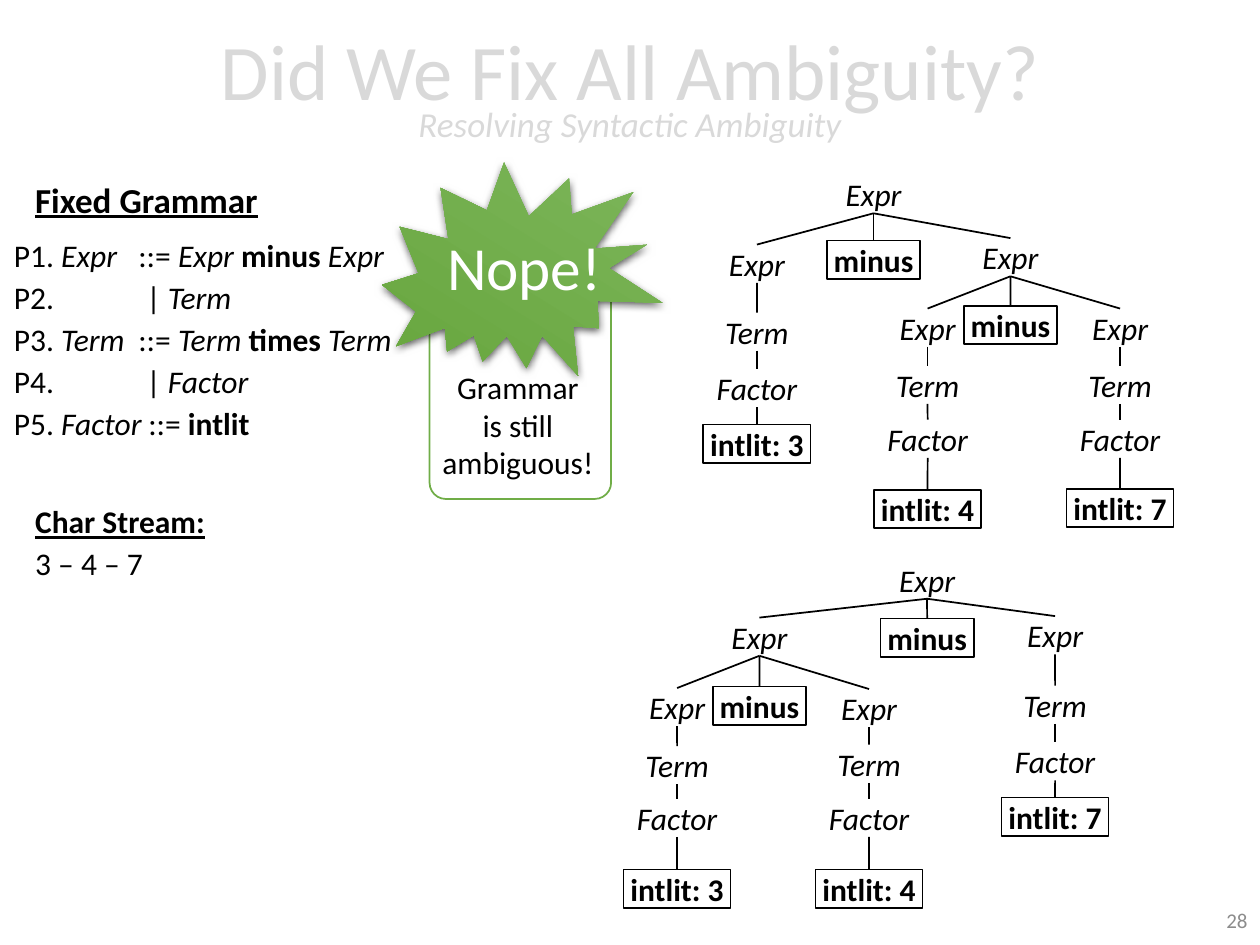
from dataclasses import dataclass

from lxml.etree import SubElement
from pptx import Presentation
from pptx.dml.color import RGBColor
from pptx.enum.shapes import MSO_CONNECTOR, MSO_SHAPE
from pptx.enum.text import MSO_ANCHOR, MSO_AUTO_SIZE, PP_ALIGN
from pptx.oxml.ns import qn
from pptx.util import Cm, Pt


@dataclass(frozen=True)
class Theme:
    font: str = "Calibri"
    ink: str = "000000"
    paper: str = "FFFFFF"
    title: str = "D9D9D9"
    number: str = "8C8C8C"
    green: str = "70AD47"
    burst_top: str = "81B861"
    burst_bottom: str = "62A336"
    title_size: int = 45
    burst_size: int = 35
    heading_size: int = 20
    body_size: int = 18
    number_size: int = 12
    line: int = 1


THEME = Theme()

TITLE = "Did We Fix All Ambiguity?"
SUBTITLE = "Resolving Syntactic Ambiguity"
SLIDE_NUMBER = "28"
GRAMMAR_HEADING = "Fixed Grammar"
STREAM_HEADING, STREAM = "Char Stream:", "3 – 4 – 7"
BURST_WORD = "Nope!"
VERDICT = ("Grammar\vis still", "ambiguous!")
GRAMMAR = [
    ("P1. ", "Expr", "::= ", [("Expr", "i"), (" minus ", "b"), ("Expr", "i")], 2.51),
    ("P2.", "", "| ", [("Term", "i")], 2.67),
    ("P3. ", "Term", "::= ", [("Term ", "i"), ("times ", "b"), ("Term", "i")], 2.51),
    ("P4.", "", "| ", [("Factor", "i")], 2.67),
    ("P5. ", "Factor", "::= ", [("intlit", "b")], 2.71),
]


def operand(number, x, tops):
    """Return the Expr-Term-Factor-intlit branch centred on x."""
    branch = []
    for label, top in reversed(list(zip(("Expr", "Term", "Factor", f"intlit: {number}"), tops))):
        branch = [(label, x, top, branch)]
    return branch[0]


def subtraction(x, top, left, minus_top, right):
    """Return an Expr node that splits around a minus."""
    return ("Expr", x, top, [left, ("minus", x, minus_top, []), right])


PARSE_TREES = [
    subtraction(
        17.61, 3.53,
        operand(3, 15.26, (4.93, 6.3, 7.44, 8.56)), 4.85,
        subtraction(
            20.37, 4.8,
            operand(4, 18.7, (6.22, 7.37, 8.46, 9.88)), 6.17,
            operand(7, 22.58, (6.22, 7.37, 8.46, 9.86)))),
    subtraction(
        18.69, 11.3,
        subtraction(
            15.31, 12.45,
            operand(3, 13.65, (13.87, 15.04, 16.1, 17.53)), 13.84,
            operand(4, 17.52, (13.89, 15.01, 16.1, 17.53))), 12.47,
        operand(7, 21.27, (12.42, 13.82, 14.96, 16.08))),
]
NODE_WIDTHS = {"Expr": 1.4, "Term": 1.6, "Factor": 2, "minus": 1.88, "intlit": 2.16}
NODE_HEIGHT, NODE_INSET = 0.77, 0.12


def rgb(value):
    """Return a colour from its hex value."""
    return RGBColor.from_string(value)


def style(font, size, color=THEME.ink, bold=None, italic=None, underline=None):
    """Set every font property of a paragraph or run."""
    font.name, font.size, font.color.rgb = THEME.font, Pt(size), rgb(color)
    font.bold, font.italic, font.underline = bold, italic, underline


def add_text(shapes, box, lines, align=PP_ALIGN.LEFT, anchor=MSO_ANCHOR.TOP, wrap=True):
    """Add a text box from (text, style, spacing, space before) lines."""
    frame = shapes.add_textbox(*map(Cm, box)).text_frame
    frame.word_wrap, frame.vertical_anchor = wrap, anchor
    for index, (text, look, spacing, before) in enumerate(lines):
        paragraph = frame.add_paragraph() if index else frame.paragraphs[0]
        paragraph.text, paragraph.alignment = text, align
        paragraph.line_spacing, paragraph.space_before = spacing, Pt(before)
        style(paragraph.font, **look)
    return frame


def add_shape(shapes, kind, box):
    """Add a white preset shape without line or shadow."""
    shape = shapes.add_shape(kind, *map(Cm, box))
    shape.shadow.inherit = False
    shape.fill.solid()
    shape.fill.fore_color.rgb = rgb(THEME.paper)
    shape.line.fill.background()
    return shape


def outline(shape, color):
    """Give a shape or connector a thin line."""
    shape.line.color.rgb, shape.line.width = rgb(color), Pt(THEME.line)


def add_node(shapes, node):
    """Draw a parse tree node with its branches and return its shape."""
    label, x, top, children = node
    width = NODE_WIDTHS[label.split(":")[0]]
    terminal = not children
    shape = add_shape(shapes, MSO_SHAPE.RECTANGLE, (x - width / 2, top, width, NODE_HEIGHT))
    if terminal:
        outline(shape, THEME.ink)
    frame = shape.text_frame
    frame.margin_left = frame.margin_right = Cm(NODE_INSET)
    frame.margin_top = frame.margin_bottom = 0
    frame.word_wrap, frame.auto_size = False, MSO_AUTO_SIZE.SHAPE_TO_FIT_TEXT
    frame.text = label
    frame.paragraphs[0].alignment = PP_ALIGN.CENTER
    style(frame.paragraphs[0].font, THEME.body_size, bold=terminal, italic=not terminal)
    for child in children:
        child_shape = add_node(shapes, child)
        branch = shapes.add_connector(MSO_CONNECTOR.STRAIGHT, 0, 0, 0, 0)
        branch.begin_connect(shape, 2)
        branch.end_connect(child_shape, 0)
        outline(branch, THEME.ink)
        SubElement(branch._element.spPr, qn("a:effectLst"))
    return shape


def add_burst(shapes):
    """Draw the green burst with its word."""
    burst_group = shapes.add_group_shape().shapes
    burst = add_shape(burst_group, MSO_SHAPE.EXPLOSION2, (7.92, 2.97, 5.31, 5.16))
    burst.rotation = 31.8
    burst.fill.gradient()
    burst.fill.gradient_angle = 270
    for stop, color, position in zip(
            burst.fill.gradient_stops, (THEME.burst_top, THEME.burst_bottom), (0, 1)):
        stop.color.rgb, stop.position = rgb(color), position
    effects = burst._element.spPr.find(qn("a:effectLst"))
    shadow = SubElement(effects, qn("a:outerShdw"), blurRad=str(Pt(4.5)), dist=str(Pt(1.5)),
                        dir="5400000", algn="ctr", rotWithShape="0")
    shade = SubElement(shadow, qn("a:srgbClr"), val=THEME.ink)
    SubElement(shade, qn("a:alpha"), val="63000")
    look = dict(size=THEME.burst_size, color=THEME.paper)
    add_text(burst_group, (8.74, 4.5, 3.66, 1.75), [(BURST_WORD, look, None, 0)],
             PP_ALIGN.CENTER, wrap=False)


def add_grammar(shapes):
    """Write the productions with their operators on tab stops."""
    plain = dict(size=THEME.body_size)
    frame = add_text(shapes, (0.03, 4.55, 9.17, 4.5), [("", plain, Pt(24), 0)] * len(GRAMMAR))
    for paragraph, (rule, head, operator, production, tab) in zip(frame.paragraphs, GRAMMAR):
        stops = SubElement(paragraph._p.get_or_add_pPr(), qn("a:tabLst"))
        SubElement(stops, qn("a:tab"), pos=str(Cm(tab)), algn="l")
        paragraph._p.pPr.insert_element_before(stops, "a:defRPr", "a:extLst")
        pieces = [(rule, ""), (head, "i"), ("\t" + operator, ""), *production]
        for text, face in pieces:
            if text:
                run = paragraph.add_run()
                run.text = text
                style(run.font, THEME.body_size, bold=face == "b", italic=face == "i")


def main():
    """Build the slide and save it."""
    deck = Presentation()
    deck.slide_width, deck.slide_height = Cm(25.4), Cm(19.05)
    shapes = deck.slides.add_slide(deck.slide_layouts[6]).shapes
    body = dict(size=THEME.body_size)
    heading = dict(bold=True, underline=True)
    add_text(shapes, (19.69, 18.03, 5.71, 1.02),
             [(SLIDE_NUMBER, dict(size=THEME.number_size, color=THEME.number), None, 0)],
             PP_ALIGN.RIGHT, MSO_ANCHOR.MIDDLE)
    add_text(shapes, (0, 0.08, 25.4, 3.68), [
        (TITLE, dict(size=THEME.title_size, color=THEME.title), 0.7, 0),
        (SUBTITLE, dict(size=THEME.heading_size, color=THEME.title, italic=True), 0.7, 0),
    ], PP_ALIGN.CENTER, MSO_ANCHOR.MIDDLE)
    for tree in PARSE_TREES:
        add_node(shapes, tree)
    card = add_shape(shapes, MSO_SHAPE.ROUNDED_RECTANGLE, (8.66, 5.46, 3.66, 4.6))
    card.adjustments[0] = 0.09
    outline(card, THEME.green)
    add_text(shapes, (8.61, 7.29, 3.66, 2.57), [(line, body, None, 0) for line in VERDICT],
             PP_ALIGN.CENTER)
    add_burst(shapes)
    add_text(shapes, (0.46, 10.13, 4.29, 2.49),
             [(STREAM_HEADING, body | heading, Pt(18), 10), (STREAM, body, Pt(14), 10)])
    add_grammar(shapes)
    add_text(shapes, (0.46, 3.56, 5.38, 2.49),
             [(GRAMMAR_HEADING, dict(size=THEME.heading_size) | heading, 0.9, 10)])
    deck.save("out.pptx")


if __name__ == "__main__":
    main()
